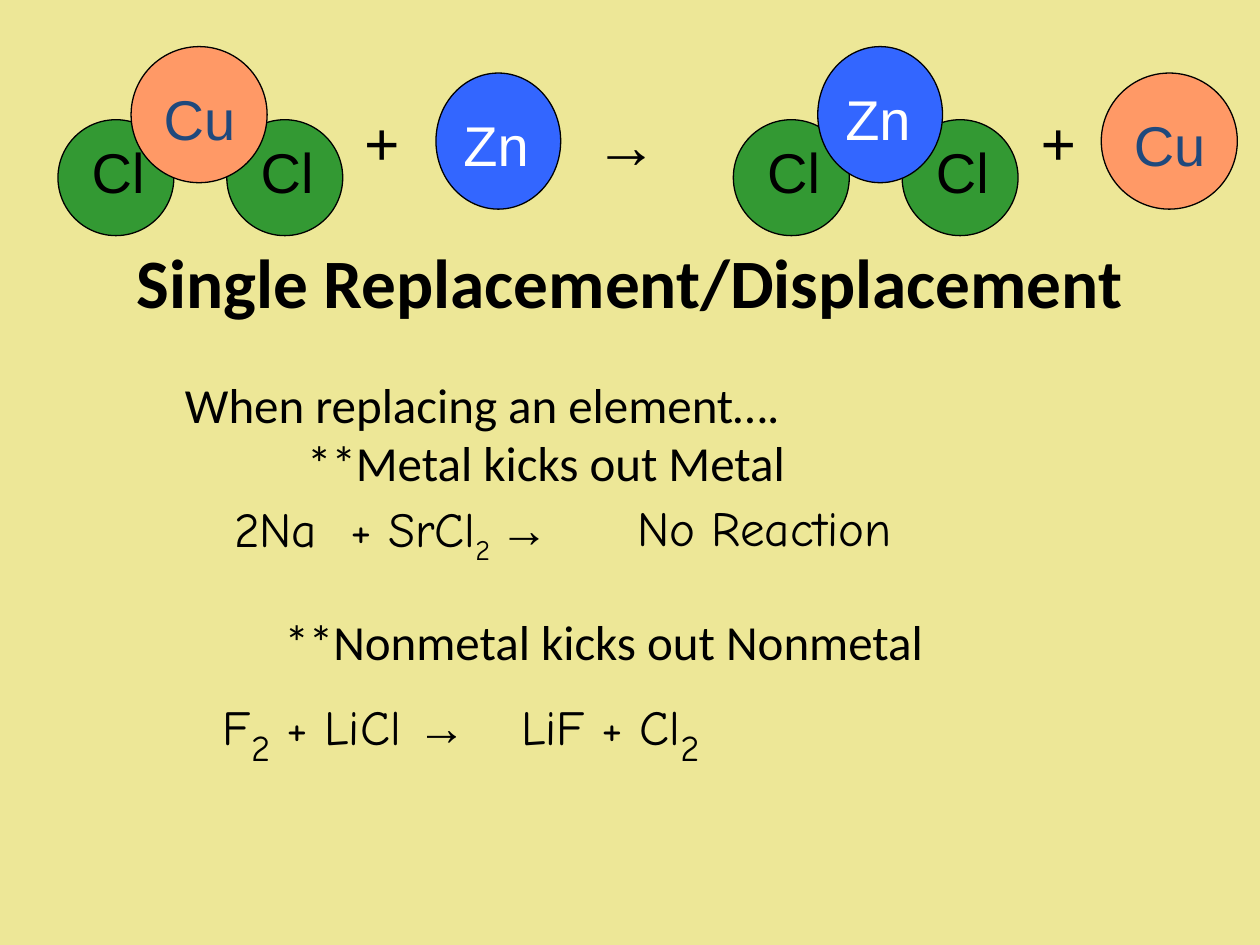
from dataclasses import dataclass

import pptx
import pptx.dml.color
import pptx.enum.shapes
import pptx.enum.text
import pptx.oxml
import pptx.oxml.ns
import pptx.util

Inches = pptx.util.Inches
Pt = pptx.util.Pt


@dataclass
class Atom:
    width: float
    height: float
    fill: str
    color: str
    label_left: float
    label_top: float
    label_width: float
    indent: float = 0


class Theme:
    background = "EDE797"
    black = "000000"
    body_font = "Calibri"
    atom_font = "Arial"
    operator_font = "Times New Roman"
    formula_font = "Comic Neue"
    title_size = 39.6
    operator_size = 36
    atom_size = 32
    body_size = 28
    large_subscript_size = 36
    atoms = {
        "Cl": Atom(0.92, 0.92, "339933", black, 0.17, 0.09, 0.83),
        "Cu": Atom(1.08, 1.08, "FF9966", "1F497D", 0, 0.25, 1.08, 0.16),
        "Zn": Atom(0.99, 1.08, "3366FF", "FFFFFF", 0, 0.25, 0.92, 0.12),
    }


def rgb(value):
    return pptx.dml.color.RGBColor.from_string(value)


class SlideBuilder:
    def __init__(self, slide, theme):
        self.slide = slide
        self.theme = theme
        fill = slide.background.fill
        fill.solid()
        fill.fore_color.rgb = rgb(theme.background)

    def style(self, font, name, size, color=Theme.black, bold=False):
        font.name = name
        font.size = Pt(size)
        font.color.rgb = rgb(color)
        font.bold = bold

    def frame(self, left, top, width, height, wrap=True):
        box = self.slide.shapes.add_textbox(
            Inches(left), Inches(top), Inches(width), Inches(height))
        box.text_frame.word_wrap = wrap
        return box.text_frame

    def indent(self, paragraph, length):
        properties = paragraph._p.get_or_add_pPr()
        properties.set("marL", str(Inches(length)))
        properties.set("indent", "0")

    def title(self, text):
        frame = self.frame(0.5, 1.87, 9, 0.71)
        frame.vertical_anchor = pptx.enum.text.MSO_ANCHOR.MIDDLE
        paragraph = frame.paragraphs[0]
        paragraph.text = text
        paragraph.alignment = pptx.enum.text.PP_ALIGN.CENTER
        self.style(paragraph.font, self.theme.body_font, self.theme.title_size, bold=True)

    def atom(self, symbol, left, top):
        atom = self.theme.atoms[symbol]
        circle = self.slide.shapes.add_shape(
            pptx.enum.shapes.MSO_SHAPE.OVAL,
            Inches(left), Inches(top), Inches(atom.width), Inches(atom.height))
        circle.shadow.inherit = False
        circle.fill.solid()
        circle.fill.fore_color.rgb = rgb(atom.fill)
        circle.line.color.rgb = rgb(self.theme.black)
        circle.line.width = Pt(0.75)
        frame = self.frame(left + atom.label_left, top + atom.label_top,
                           atom.label_width, 0.63)
        paragraph = frame.paragraphs[0]
        paragraph.text = symbol
        paragraph.space_before = Pt(2)
        self.indent(paragraph, atom.indent)
        self.style(paragraph.font, self.theme.atom_font, self.theme.atom_size, atom.color)

    def chloride(self, metal, left):
        self.atom("Cl", left + 1.34, 0.95)
        self.atom("Cl", left, 0.95)
        self.atom(metal, left + (0.58 if metal == "Cu" else 0.67), 0.37)

    def operator(self, symbol, left, top, width):
        paragraph = self.frame(left, top, width, 0.7).paragraphs[0]
        paragraph.text = symbol
        paragraph.space_before = Pt(2)
        self.style(paragraph.font, self.theme.operator_font,
                   self.theme.operator_size, bold=True)

    def body(self, lines):
        frame = self.frame(1.37, 2.92, 7.74, 2.46)
        for index, (text, indent, space_before) in enumerate(lines):
            paragraph = frame.paragraphs[0] if index == 0 else frame.add_paragraph()
            paragraph.text = text
            paragraph.space_before = Pt(space_before)
            self.indent(paragraph, indent)
            self.style(paragraph.font, self.theme.body_font, self.theme.body_size)

    def formula(self, left, top, width, parts, subscript_size=Theme.body_size, tab=None):
        paragraph = self.frame(left, top, width, 0.57, wrap=False).paragraphs[0]
        if tab:
            properties = paragraph._p.get_or_add_pPr()
            tabs = pptx.oxml.parse_xml(
                f'<a:tabLst {pptx.oxml.ns.nsdecls("a")}>'
                f'<a:tab pos="{Inches(tab)}" algn="l"/></a:tabLst>')
            properties.append(tabs)
        if len(parts) == 1:
            paragraph.text = parts[0]
            self.style(paragraph.font, self.theme.formula_font, self.theme.body_size)
            return
        for text in parts:
            run = paragraph.add_run()
            run.text = text
            subscript = text.strip() == "2"
            name = self.theme.atom_font if text == "→" else self.theme.formula_font
            self.style(run.font, name, subscript_size if subscript else self.theme.body_size)
            if subscript:
                run._r.get_or_add_rPr().set("baseline", "-25000")


def main():
    presentation = pptx.Presentation()
    presentation.slide_width = Inches(10)
    presentation.slide_height = Inches(7.5)
    slide = presentation.slides.add_slide(presentation.slide_layouts[6])
    theme = Theme()
    builder = SlideBuilder(slide, theme)

    builder.title("Single Replacement/Displacement")

    builder.operator("→", 4.62, 0.79, 0.75)
    builder.atom("Zn", 3.46, 0.58)
    builder.chloride("Cu", 0.46)
    builder.operator("+", 2.79, 0.77, 0.5)
    builder.chloride("Zn", 5.82)
    builder.atom("Cu", 8.74, 0.58)
    builder.operator("+", 8.16, 0.77, 0.5)

    builder.body([
        ("When replacing an element….", 0, 0),
        ("**Metal kicks out Metal", 0.97, 0),
        ("**Nonmetal kicks out Nonmetal", 0.79, 68.4),
    ])
    builder.formula(1.76, 3.91, 3.06, ["2Na\t+ SrCl", "2 ", "→"], tab=0.92)
    builder.formula(4.96, 3.9, 2.41, ["No Reaction"])
    builder.formula(1.67, 5.37, 2.33, ["F", "2", " + LiCl ", "→"],
                    theme.large_subscript_size)
    builder.formula(4.04, 5.37, 1.84, ["LiF + Cl", "2"], theme.large_subscript_size)

    presentation.save("out.pptx")


if __name__ == "__main__":
    main()
